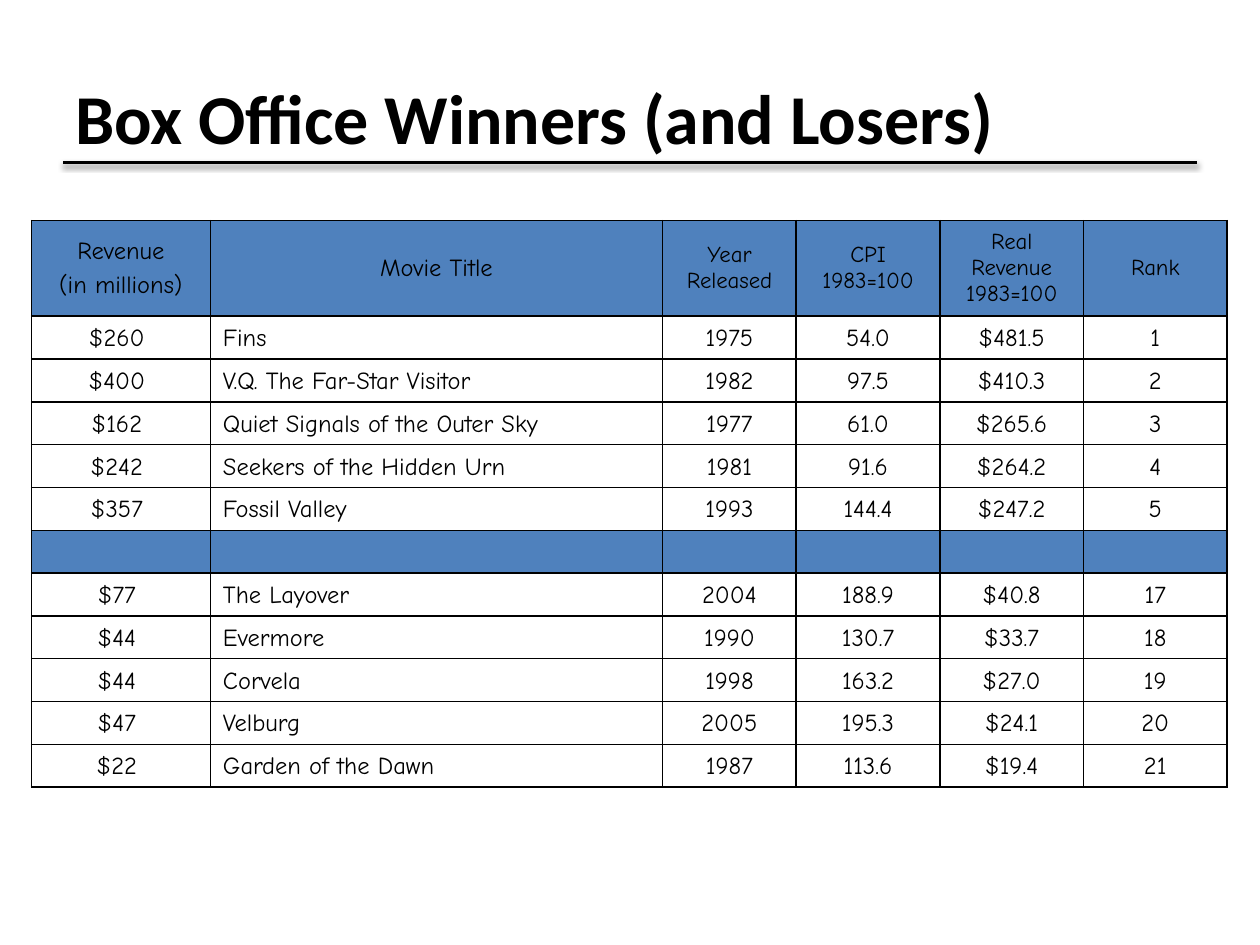
from lxml import etree
from pptx import Presentation, util as u
from pptx.dml.color import RGBColor
from pptx.enum import shapes, text
from pptx.oxml.ns import qn

COLORS = {"ink": "000000", "band": "4F81BD"}
TITLE_FORMAT = {"name": "Calibri", "size": u.Pt(40), "bold": True}
BODY_FORMAT = {"name": "Comic Neue", "size": u.Pt(14), "bold": False}
SMALL_FORMAT = {**BODY_FORMAT, "size": u.Pt(13)}

COLUMN_WIDTHS = [1.42, 3.59, 1.06, 1.14, 1.14, 1.14]
HEADER_HEIGHT, ROW_HEIGHT = 0.76, 0.34
TITLE_COLUMN = 1
HEADERS = ["Revenue\n(in millions)", "Movie Title", "Year\nReleased",
           "CPI\n1983=100", "Real\nRevenue\n1983=100", "Rank"]
WINNERS = [
    ["$260 ", "Fins", "1975", "54.0", "$481.5", "1"],
    ["$400 ", "V.Q. The Far-Star Visitor", "1982", "97.5", "$410.3", "2"],
    ["$162 ", "Quiet Signals of the Outer Sky", "1977", "61.0", "$265.6", "3"],
    ["$242 ", "Seekers of the Hidden Urn", "1981", "91.6", "$264.2", "4"],
    ["$357 ", "Fossil Valley", "1993", "144.4", "$247.2", "5"],
]
LOSERS = [
    ["$77 ", "The Layover", "2004", "188.9", "$40.8", "17"],
    ["$44 ", "Evermore", "1990", "130.7", "$33.7", "18"],
    ["$44 ", "Corvela", "1998", "163.2", "$27.0", "19"],
    ["$47 ", "Velburg", "2005", "195.3", "$24.1", "20"],
    ["$22 ", "Garden of the Dawn", "1987", "113.6", "$19.4", "21"],
]
DIVIDER = [""] * len(HEADERS)


class SlideBuilder:
    """Holds the colours and the current page."""

    def __init__(self, page, colors):
        self.page = page
        self.colors = {name: RGBColor.from_string(value)
                       for name, value in colors.items()}

    def style(self, font, values):
        for name, value in values.items():
            setattr(font, name, value)
        font.color.rgb = self.colors["ink"]

    def title(self, words, left, top, width, height):
        box = self.page.shapes.add_textbox(*map(u.Inches, (left, top, width, height)))
        frame = box.text_frame
        frame.word_wrap = True
        frame.vertical_anchor = text.MSO_ANCHOR.MIDDLE
        span = frame.paragraphs[0].add_run()
        span.text = words
        self.style(span.font, TITLE_FORMAT)

    def rule(self, left, right, y):
        line = self.page.shapes.add_connector(
            shapes.MSO_CONNECTOR.STRAIGHT, *map(u.Inches, (left, y, right, y)))
        line.line.color.rgb = self.colors["ink"]
        line.line.width = u.Pt(2)
        # Soft shadow straight below the line
        effects = etree.SubElement(line._element.spPr, qn("a:effectLst"))
        shadow = etree.SubElement(
            effects, qn("a:outerShdw"), blurRad=str(u.Pt(3.1)),
            dist=str(u.Pt(1.6)), dir="5400000", rotWithShape="0")
        color = etree.SubElement(shadow, qn("a:srgbClr"), val=COLORS["ink"])
        etree.SubElement(color, qn("a:alpha"), val="38000")

    def borders(self, cell):
        properties = cell._tc.get_or_add_tcPr()
        for side in ("lnL", "lnR", "lnT", "lnB"):
            edge = etree.SubElement(properties, qn(f"a:{side}"), w=str(u.Pt(1)))
            fill = etree.SubElement(edge, qn("a:solidFill"))
            etree.SubElement(fill, qn("a:srgbClr"), val=COLORS["ink"])

    def cell(self, cell, words, values, centered, header):
        self.borders(cell)
        if header or not words:
            cell.fill.solid()
            cell.fill.fore_color.rgb = self.colors["band"]
        else:
            cell.fill.background()
        anchor = text.MSO_ANCHOR
        cell.vertical_anchor = anchor.MIDDLE if header else anchor.BOTTOM
        cell.text = words
        for para in cell.text_frame.paragraphs:
            para.alignment = text.PP_ALIGN.CENTER if centered else text.PP_ALIGN.LEFT
            indent = u.Inches(0.51)
            para._p.get_or_add_pPr().set("marL", str(indent))
            para._p.get_or_add_pPr().set("indent", str(-indent))
            for span in para.runs:
                self.style(span.font, values)
            if not words:  # keeps an empty row at its set height
                etree.SubElement(para._p, qn("a:endParaRPr"), sz="1400")

    def table(self, rows, left, top):
        heights = [HEADER_HEIGHT] + [ROW_HEIGHT] * (len(rows) - 1)
        grid = self.page.shapes.add_table(
            len(rows), len(COLUMN_WIDTHS), u.Inches(left), u.Inches(top),
            u.Inches(sum(COLUMN_WIDTHS)), u.Inches(sum(heights))).table
        grid.first_row = grid.horz_banding = False
        for column, width in zip(grid.columns, COLUMN_WIDTHS):
            column.width = u.Inches(width)
        for r, (row, height) in enumerate(zip(rows, heights)):
            grid.rows[r].height = u.Inches(height)
            for c, words in enumerate(row):
                header = r == 0
                small = header and c > TITLE_COLUMN
                self.cell(grid.cell(r, c), words,
                          SMALL_FORMAT if small else BODY_FORMAT,
                          header or c != TITLE_COLUMN, header)
        return grid


def main():
    deck = Presentation()
    deck.slide_width, deck.slide_height = u.Inches(10), u.Inches(7.5)
    page = deck.slides.add_slide(deck.slide_layouts[6])
    builder = SlideBuilder(page, COLORS)

    # Heading with its underline
    builder.rule(0.5, 9.5, 1.29)
    builder.title("Box Office Winners (and Losers)", 0.5, 0.3, 9, 1.25)

    # Film table: winners, a coloured divider, losers
    grid = builder.table([HEADERS, *WINNERS, DIVIDER, *LOSERS], 0.25, 1.75)
    grid.cell(0, 0).text_frame.paragraphs[1].space_before = u.Pt(3)

    deck.save("out.pptx")


if __name__ == "__main__":
    main()
